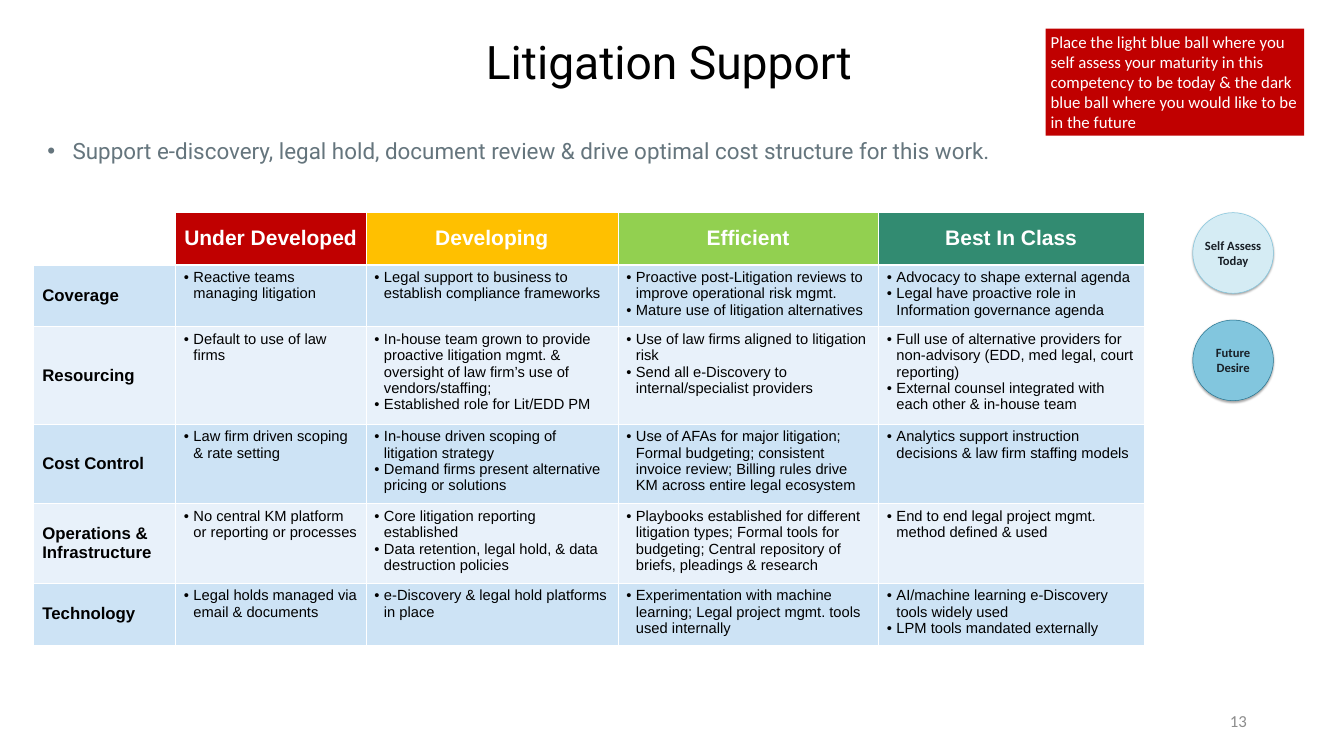
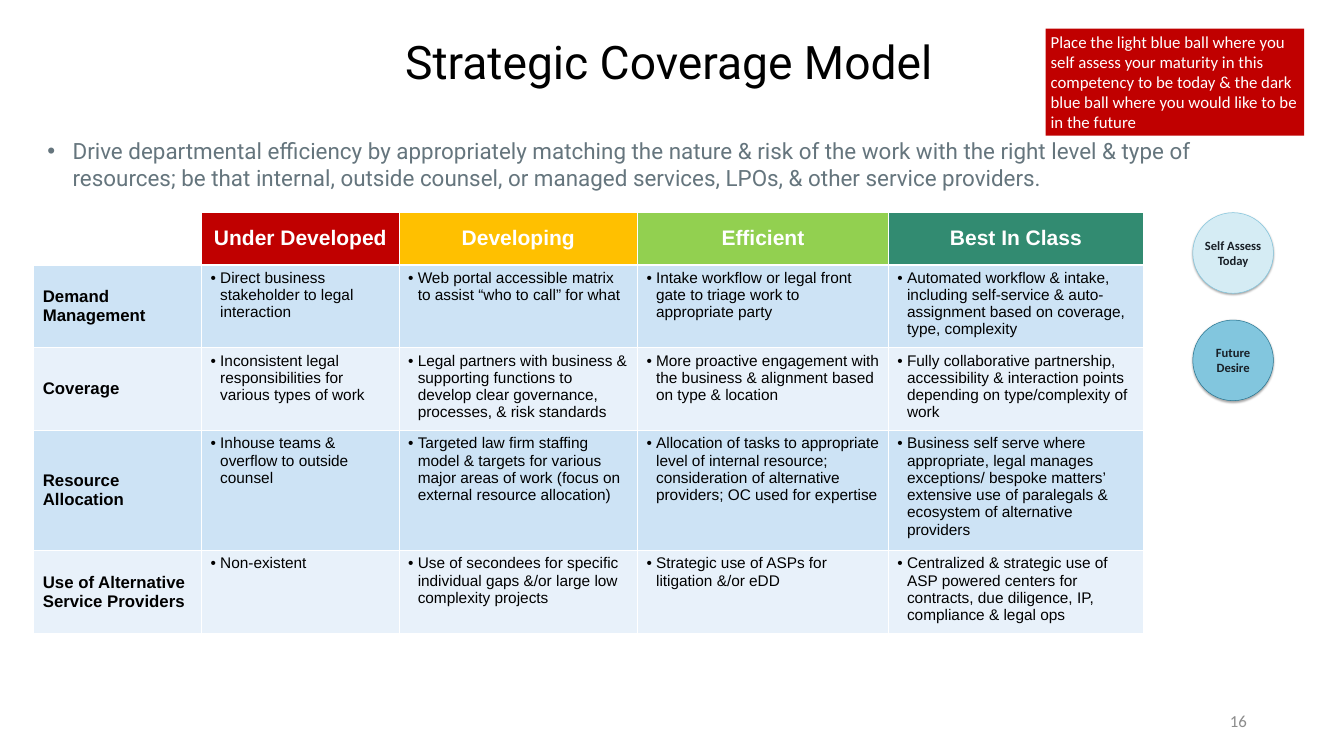
from lxml import etree
from pptx import Presentation
from pptx.dml.color import RGBColor
from pptx.enum import shapes, text
from pptx.oxml import ns
from pptx.util import Inches, Pt

# Shared look
WHITE = RGBColor(0xFF, 0xFF, 0xFF)
BLACK = RGBColor(0, 0, 0)
INK = RGBColor(0x18, 0x1F, 0x26)
GREY = RGBColor(0x8C, 0x8C, 0x8C)
SLATE = RGBColor(0x65, 0x75, 0x7D)
RED = RGBColor(0xC0, 0, 0)
AMBER = RGBColor(0xFF, 0xC0, 0)
LIME = RGBColor(0x92, 0xD0, 0x50)
GREEN = RGBColor(0x32, 0x8B, 0x71)
PALE = RGBColor(0xD5, 0xEC, 0xF4)
SKY = RGBColor(0x82, 0xC6, 0xDE)
TEAL = RGBColor(0x27, 0x76, 0x92)
BANDS = [RGBColor(0xCD, 0xE3, 0xF5), RGBColor(0xE8, 0xF1, 0xFA)]

LEVELS = [("Under Developed", RED), ("Developing", AMBER),
          ("Efficient", LIME), ("Best In Class", GREEN)]
BALLS = [("Self Assess Today", PALE, SKY), ("Future Desire", SKY, TEAL)]
HINT = ("Place the light blue ball where you self assess your maturity in this "
        "competency to be today & the dark blue ball where you would like to be "
        "in the future")
LEFT, CENTER, RIGHT = text.PP_ALIGN.LEFT, text.PP_ALIGN.CENTER, text.PP_ALIGN.RIGHT
MIDDLE, TOP = text.MSO_ANCHOR.MIDDLE, text.MSO_ANCHOR.TOP
FIT = text.MSO_AUTO_SIZE.SHAPE_TO_FIT_TEXT

# Slide content: each row is height, name, then one entry per level
PAGES = [
    {
        "title": "Litigation Support",
        "goal": "Support e-discovery, legal hold, document review & drive optimal "
                "cost structure for this work.",
        "tall": 0.64, "num": "13", "size": 21, "pad": 0.17,
        "cols": [2.81, 3.78, 5, 5.17, 5.27],
        "rows": [
            (1.21, "Coverage",
             "Reactive teams managing litigation",
             "Legal support to business to establish compliance frameworks",
             "Proactive post-Litigation reviews to improve operational risk mgmt.\n"
             "Mature use of litigation alternatives",
             "Advocacy to shape external agenda\n"
             "Legal have proactive role in Information governance agenda"),
            (1.9, "Resourcing",
             "Default to use of law firms",
             "In-house team grown to provide proactive litigation mgmt. & "
             "oversight of law firm’s use of vendors/staffing;\n"
             "Established role for Lit/EDD PM",
             "Use of law firms aligned to litigation risk\n"
             "Send all e-Discovery to internal/specialist providers",
             "Full use of alternative providers for non-advisory (EDD, med legal, "
             "court reporting)\n"
             "External counsel integrated with each other & in-house team"),
            (1.55, "Cost Control",
             "Law firm driven scoping & rate setting",
             "In-house driven scoping of litigation strategy\n"
             "Demand firms present alternative pricing or solutions",
             "Use of AFAs for major litigation; Formal budgeting; consistent "
             "invoice review; Billing rules drive KM across entire legal ecosystem",
             "Analytics support instruction decisions & law firm staffing models"),
            (1.55, "Operations & Infrastructure",
             "No central KM platform or reporting or processes",
             "Core litigation reporting established\n"
             "Data retention, legal hold, & data destruction policies",
             "Playbooks established for different litigation types; Formal tools "
             "for budgeting; Central repository of briefs, pleadings & research",
             "End to end legal project mgmt. method defined & used"),
            (1.21, "Technology",
             "Legal holds managed via email & documents",
             "e-Discovery & legal hold platforms in place",
             "Experimentation with machine learning; Legal project mgmt. tools "
             "used internally",
             "AI/machine learning e-Discovery tools widely used\n"
             "LPM tools mandated externally"),
        ],
    },
    {
        "title": "Strategic Coverage Model",
        "goal": "Drive departmental efficiency by appropriately matching the nature & "
                "risk of the work with the right level & type of resources; be that "
                "internal, outside counsel, or managed services, LPOs, & other "
                "service providers.",
        "tall": 1.18, "num": "16", "size": 22, "pad": 0.18,
        "cols": [3.33, 3.92, 4.73, 4.98, 5.06],
        "rows": [
            (1.58, "Demand Management",
             "Direct business stakeholder to legal interaction",
             "Web portal accessible matrix to assist “who to call” for what",
             "Intake workflow or legal front gate to triage work to appropriate party",
             "Automated workflow & intake, including self-service & "
             "auto-assignment based on coverage, type, complexity"),
            (1.58, "Coverage",
             "Inconsistent legal responsibilities for various types of work",
             "Legal partners with business & supporting functions to develop clear "
             "governance, processes, & risk standards",
             "More proactive engagement with the business & alignment based on "
             "type & location",
             "Fully collaborative partnership, accessibility & interaction points "
             "depending on type/complexity of work"),
            (1.93, "Resource Allocation",
             "Inhouse teams & overflow to outside counsel",
             "Targeted law firm staffing model & targets for various major areas "
             "of work (focus on external resource allocation)",
             "Allocation of tasks to appropriate level of internal resource; "
             "consideration of alternative providers; OC used for expertise",
             "Business self serve where appropriate, legal manages exceptions/ "
             "bespoke matters’ extensive use of paralegals & ecosystem of "
             "alternative providers"),
            (1.58, "Use of Alternative Service Providers",
             "Non-existent",
             "Use of secondees for specific individual gaps &/or large low "
             "complexity projects",
             "Strategic use of ASPs for litigation &/or eDD",
             "Centralized & strategic use of ASP powered centers for contracts, "
             "due diligence, IP, compliance & legal ops"),
        ],
    },
]


def write(frame, words, face, size, color, bold=False, align=LEFT, hang=0):
    """Fill a text frame with evenly styled paragraphs, bulleted if hang is set."""
    frame.text = words
    for par in frame.paragraphs:
        par.alignment = align
        par.space_before = Pt(0)
        if hang:
            props = par._p.get_or_add_pPr()
            props.set("marL", str(Inches(hang)))
            props.set("indent", str(-Inches(hang)))
            etree.SubElement(props, ns.qn("a:buFont"), typeface="Arial")
            etree.SubElement(props, ns.qn("a:buChar"), char="•")
        par.font.name, par.font.size = face, Pt(size)
        par.font.bold, par.font.color.rgb = bold, color


def edge(cell, side, width):
    """Draw one white cell border."""
    line = etree.SubElement(cell._tc.get_or_add_tcPr(), ns.qn("a:ln" + side),
                            w=str(Pt(width)))
    fill = etree.SubElement(line, ns.qn("a:solidFill"))
    etree.SubElement(fill, ns.qn("a:srgbClr"), val=str(WHITE))


deck = Presentation()
deck.slide_width, deck.slide_height = Inches(26.67), Inches(15)

for page in PAGES:
    slide = deck.slides.add_slide(deck.slide_layouts[1])
    title, body = slide.placeholders

    # Page number
    box = slide.shapes.add_textbox(Inches(18.84), Inches(13.9), Inches(6), Inches(0.8))
    box.text_frame.word_wrap = True
    box.text_frame.vertical_anchor = MIDDLE
    write(box.text_frame, page["num"], "Calibri", 24, GREY, align=RIGHT)

    # Title
    title.left, title.top = Inches(0.67), Inches(0.74)
    title.width, title.height = Inches(25.21), Inches(0.93)
    frame = title.text_frame
    frame.auto_size = text.MSO_AUTO_SIZE.NONE
    frame.vertical_anchor = MIDDLE
    frame.margin_left = frame.margin_right = Inches(0.27)
    frame.margin_top = frame.margin_bottom = Inches(0.13)
    write(frame, page["title"], "Roboto", 66, BLACK, align=CENTER)

    # Red hint
    hint = slide.shapes.add_shape(shapes.MSO_SHAPE.RECTANGLE, Inches(20.75),
                                  Inches(0.57), Inches(5.13), Inches(2.12))
    hint.shadow.inherit = False
    hint.fill.solid()
    hint.fill.fore_color.rgb = RED
    hint.line.fill.background()
    hint.text_frame.auto_size = FIT
    hint.text_frame.vertical_anchor = TOP
    write(hint.text_frame, HINT, "Calibri", 24, WHITE)

    # Goal
    body.left, body.top = Inches(0.84), Inches(2.67)
    body.width, body.height = Inches(25.04), Inches(page["tall"])
    body.text_frame.auto_size = FIT
    write(body.text_frame, page["goal"], "Roboto", 32, SLATE, hang=0.5)

    # Balls with a soft shadow below
    for i, (label, fill, rim) in enumerate(BALLS):
        ball = slide.shapes.add_shape(shapes.MSO_SHAPE.OVAL, Inches(23.67),
                                      Inches(4.22 + 2.13 * i), Inches(1.6), Inches(1.6))
        ball.fill.solid()
        ball.fill.fore_color.rgb = fill
        ball.line.color.rgb = rim
        ball.line.width = Pt(0.75)
        ball.shadow.inherit = False
        soft = etree.SubElement(ball._element.spPr.find(ns.qn("a:effectLst")),
                                ns.qn("a:outerShdw"), blurRad=str(Pt(3.1)),
                                dist=str(Pt(1.8)), dir="5400000")
        tint = etree.SubElement(soft, ns.qn("a:srgbClr"), val=str(BLACK))
        etree.SubElement(tint, ns.qn("a:alpha"), val="35000")
        frame = ball.text_frame
        frame.margin_left = frame.margin_right = 0
        frame.margin_top = frame.margin_bottom = 0
        frame.vertical_anchor = MIDDLE
        write(frame, label, "Calibri", 18, INK, True, CENTER)

    # Maturity table
    cols, rows = page["cols"], page["rows"]
    highs = [1.03] + [row[0] for row in rows]
    table = slide.shapes.add_table(len(highs), len(cols), Inches(0.67), Inches(4.22),
                                   Inches(sum(cols)), Inches(sum(highs))).table
    for c, wide in enumerate(cols):
        table.columns[c].width = Inches(wide)
    for r, high in enumerate(highs):
        table.rows[r].height = Inches(high)
        for c in range(len(cols)):
            cell = table.cell(r, c)
            cell.margin_left = cell.margin_right = Inches(page["pad"])
            cell.margin_top = cell.margin_bottom = Inches(0.09)
            cell.vertical_anchor = MIDDLE if r == 0 or c == 0 else TOP
            for side in "LRTB":
                edge(cell, side, 3 if (r, side) in [(0, "B"), (1, "T")] else 1)
            if r == c == 0:
                cell.fill.background()
                continue
            cell.fill.solid()
            if r == 0:
                name, color = LEVELS[c - 1]
                cell.fill.fore_color.rgb = color
                write(cell.text_frame, name, "Arial", 30, WHITE, True, CENTER)
                continue
            cell.fill.fore_color.rgb = BANDS[(r - 1) % 2]
            words = rows[r - 1][c + 1]
            if c == 0:
                write(cell.text_frame, words, "Arial", 24, BLACK, True)
            else:
                write(cell.text_frame, words, "Arial", page["size"], BLACK, hang=0.19)

deck.save("out.pptx")
